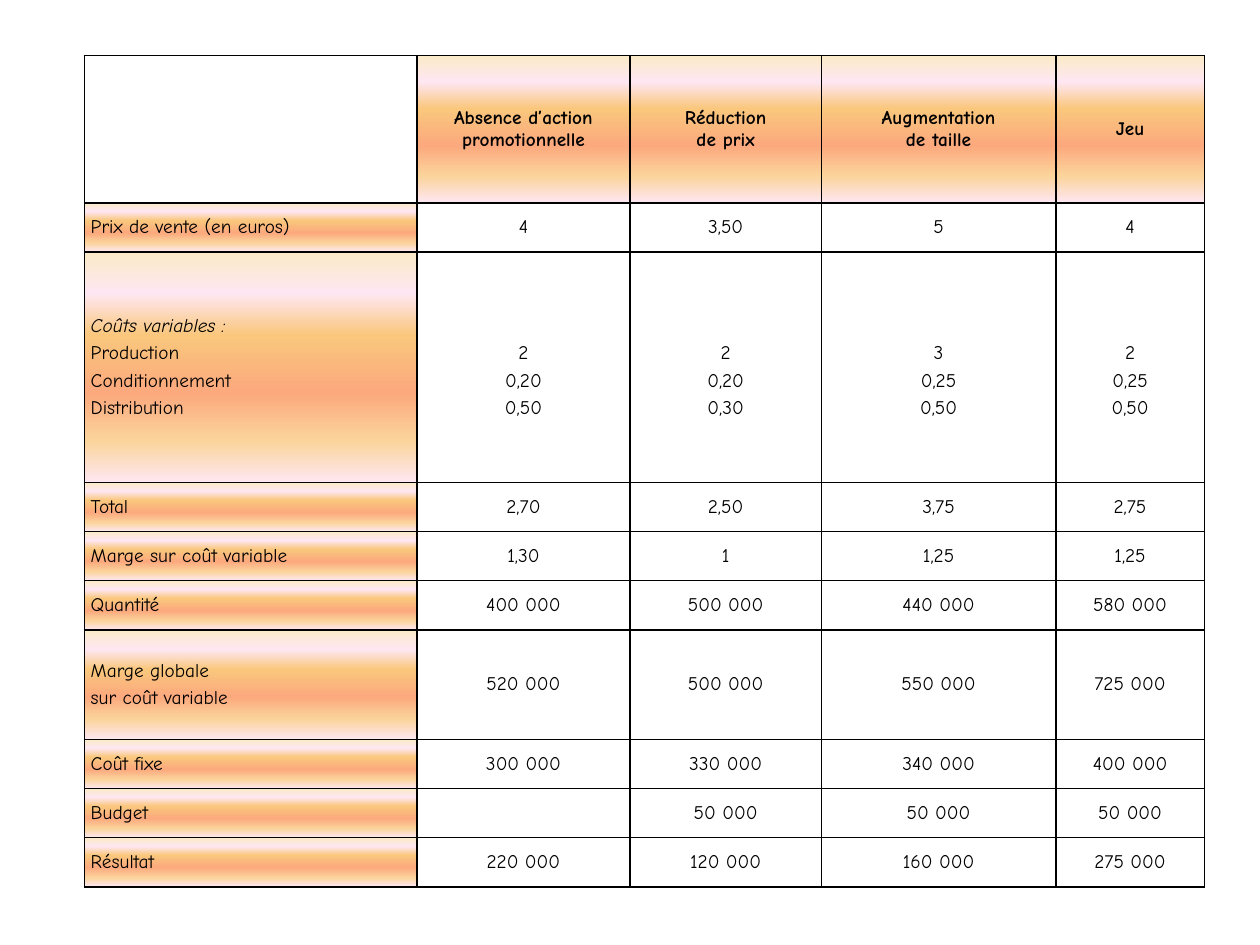
from dataclasses import dataclass

from pptx import Presentation
from pptx.dml.color import RGBColor
from pptx.enum.text import MSO_ANCHOR, PP_ALIGN
from pptx.oxml import parse_xml
from pptx.oxml.ns import nsdecls
from pptx.util import Inches, Pt


@dataclass(frozen=True)
class Theme:
    font: str = "Comic Neue"
    size: int = 11
    ink: str = "000000"
    rule: int = 1
    gap: int = 3
    glow: tuple = ((0, "FBEAC7"), (18, "FEE7F2"), (36, "FAC77D"),
                   (61, "FBA97D"), (82, "FBD49C"), (100, "FEE7F2"))


THEME = Theme()
BOX = (0.67, 0.44, 8.9, 6.6)
COLS = (2.64, 1.69, 1.52, 1.86, 1.18)
LINE = 0.22  # pitch of one text line, paragraph gap included
LOW, MID, HEAD, TALL = 0.39, 0.87, 1.17, 1.83
COSTS = "Coûts variables :"

ROWS = (
    (HEAD, "", "Absence d’action promotionnelle", "Réduction\nde prix",
     "Augmentation\nde taille", "Jeu"),
    (LOW, "Prix de vente (en euros)", "4", "3,50", "5", "4"),
    (TALL, f"{COSTS}\nProduction\nConditionnement\nDistribution",
     "2\n0,20\n0,50", "2\n0,20\n0,30", "3\n0,25\n0,50", "2\n0,25\n0,50"),
    (LOW, "Total", "2,70", "2,50", "3,75", "2,75"),
    (LOW, "Marge sur coût variable", "1,30", "1", "1,25", "1,25"),
    (LOW, "Quantité", "400 000", "500 000", "440 000", "580 000"),
    (MID, "Marge globale\nsur coût variable",
     "520 000", "500 000", "550 000", "725 000"),
    (LOW, "Coût fixe", "300 000", "330 000", "340 000", "400 000"),
    (LOW, "Budget", "", "50 000", "50 000", "50 000"),
    (LOW, "Résultat", "220 000", "120 000", "160 000", "275 000"),
)


def apply(item, **values):
    for name, value in values.items():
        setattr(item, name, value)


def frame(cell):
    """Rule all four sides of the cell."""
    props = cell._tc.get_or_add_tcPr()
    for side in "LRTB":
        props.append(parse_xml(
            f'<a:ln{side} {nsdecls("a")} w="{Pt(THEME.rule)}"><a:solidFill>'
            f'<a:srgbClr val="{THEME.ink}"/></a:solidFill></a:ln{side}>'))


def glow(cell):
    """Fill the cell with the top-to-bottom gradient."""
    stops = "".join(
        f'<a:gs pos="{pos * 1000}"><a:srgbClr val="{tint}"/></a:gs>'
        for pos, tint in THEME.glow)
    cell._tc.get_or_add_tcPr().append(parse_xml(
        f'<a:gradFill {nsdecls("a")}><a:gsLst>{stops}</a:gsLst>'
        '<a:lin ang="5400000" scaled="0"/></a:gradFill>'))


def add_run(para, text, bold):
    run = para.add_run()
    run.text = text
    apply(run.font, name=THEME.font, size=Pt(THEME.size), bold=bold,
          italic=text == COSTS)
    run.font.color.rgb = RGBColor.from_string(THEME.ink)


def write(cell, text, head, label):
    """Header lines share one paragraph; other lines get one each."""
    body = cell.text_frame
    para = body.paragraphs[0]
    for i, line in enumerate(text.split("\n")):
        if i and head:
            para.add_line_break()
        elif i:
            para = body.add_paragraph()
        apply(para, space_after=Pt(THEME.gap),
              alignment=PP_ALIGN.JUSTIFY if label else PP_ALIGN.CENTER)
        if line:
            add_run(para, line, head)


def add_grid(slide, box):
    left, top, width, height = map(Inches, box)
    table = slide.shapes.add_table(
        len(ROWS), len(COLS), left, top, width, height).table
    apply(table, first_row=False, horz_banding=False)
    for col, size in zip(table.columns, COLS):
        col.width = Inches(size)
    for r, (tall, *texts) in enumerate(ROWS):
        table.rows[r].height = Inches(tall)
        lines = texts[0].count("\n")
        for c, text in enumerate(texts):
            cell = table.cell(r, c)
            head, label = r == 0, c == 0
            # Costs line up with the entries below their heading
            lead = LINE if COSTS in texts[0] and not label and lines else 0
            apply(cell, vertical_anchor=MSO_ANCHOR.MIDDLE,
                  margin_left=Inches(0.05), margin_right=Inches(0.05),
                  margin_top=Inches(lead), margin_bottom=0)
            frame(cell)
            if head != label:
                glow(cell)
            else:
                cell.fill.background()
            write(cell, text, head, label)


def main():
    deck = Presentation()
    apply(deck, slide_width=Inches(10), slide_height=Inches(7.5))
    add_grid(deck.slides.add_slide(deck.slide_layouts[6]), BOX)
    deck.save("out.pptx")


if __name__ == "__main__":
    main()
